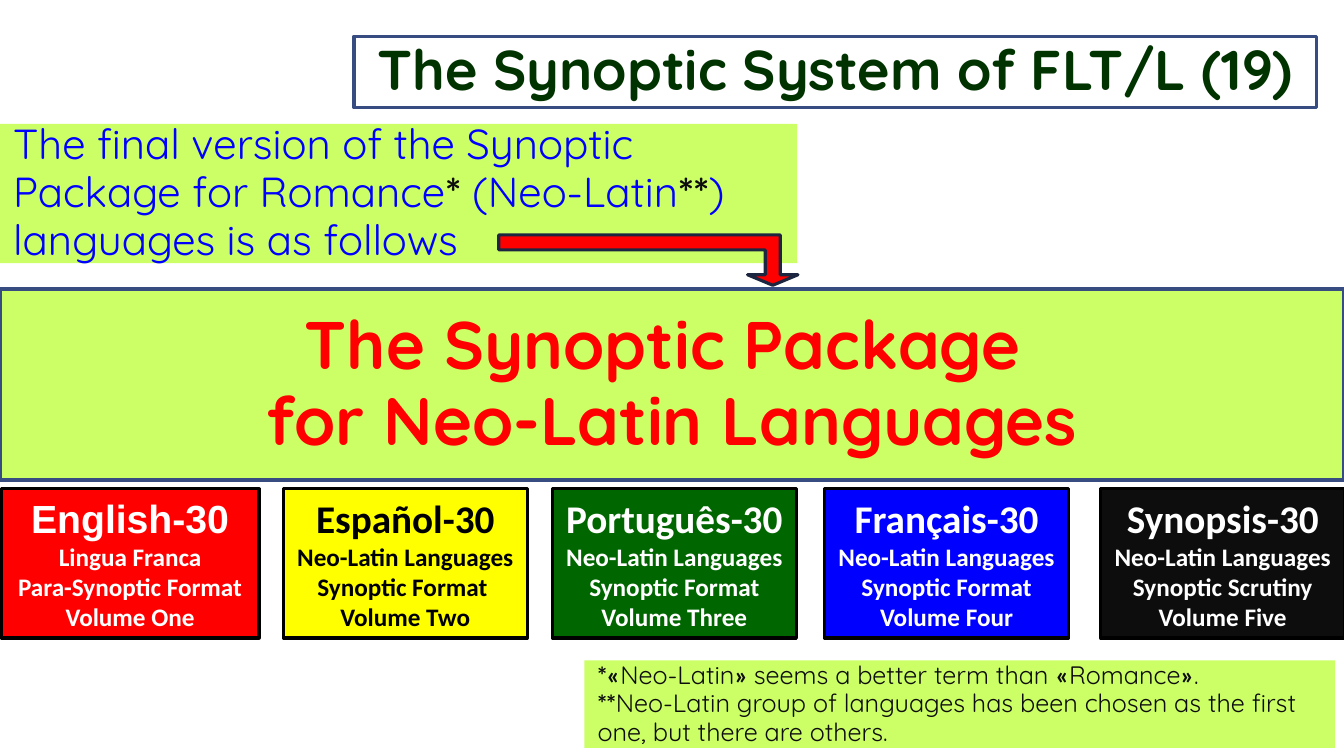
"""Build the slide on the synoptic package for Neo-Latin languages."""
from dataclasses import dataclass
from typing import Any, Optional

from pptx import Presentation
from pptx.dml.color import RGBColor
from pptx.enum.shapes import MSO_SHAPE
from pptx.enum.text import MSO_ANCHOR, MSO_AUTO_SIZE, PP_ALIGN
from pptx.util import Cm, Pt

COLORS = {
    "lime": "CCFF66", "red": "FF0000", "yellow": "FFFF00", "green": "006600",
    "blue": "0000FF", "ink": "0D0D0D", "black": "000000", "white": "FFFFFF",
    "title": "003300", "frame": "374C81", "arrow": "1C2640",
}
PANEL_FORMAT = {
    "word_wrap": True, "auto_size": MSO_AUTO_SIZE.NONE,
    "vertical_anchor": MSO_ANCHOR.MIDDLE,
    "margin_left": Cm(0.33), "margin_right": Cm(0.33),
    "margin_top": Cm(0.18), "margin_bottom": Cm(0.18),
}
VOLUME_FORMAT = {
    "word_wrap": True, "auto_size": MSO_AUTO_SIZE.SHAPE_TO_FIT_TEXT,
    "vertical_anchor": MSO_ANCHOR.TOP,
    "margin_left": Cm(0.25), "margin_right": Cm(0.25),
    "margin_top": Cm(0.13), "margin_bottom": Cm(0.13),
}
PANEL_PARAGRAPH = {"line_spacing": 0.95, "space_before": Pt(0), "alignment": PP_ALIGN.LEFT}
CENTERED_PANEL = {**PANEL_PARAGRAPH, "alignment": PP_ALIGN.CENTER}
VOLUME_PARAGRAPH = {"alignment": PP_ALIGN.CENTER}


@dataclass
class Span:
    """A stretch of text in one format."""
    text: str
    size: float
    color: str
    bold: bool = False
    font: str = "Quicksand"


@dataclass
class Panel:
    """A rectangle in centimetres with its paragraphs."""
    box: tuple[float, float, float, float]
    fill: Optional[str]
    line: Optional[str]
    line_width: float
    paragraphs: list[list[Span]]
    frame_format: dict[str, Any]
    paragraph_format: dict[str, Any]


@dataclass
class Volume:
    """One book of the package."""
    left: float
    fill: str
    text_color: str
    heading: str
    details: tuple[str, str, str]
    width: float = 6.15
    heading_font: str = "Calibri"


def apply(target: Any, values: dict[str, Any]) -> None:
    """Set every attribute named in the values."""
    for name, value in values.items():
        setattr(target, name, value)


def color(name: str) -> RGBColor:
    """Look up a colour by name."""
    return RGBColor.from_string(COLORS[name])


def paint(shape: Any, fill: Optional[str], line: Optional[str], width: float) -> None:
    """Set the fill and outline of a shape."""
    if fill:
        shape.fill.solid()
        shape.fill.fore_color.rgb = color(fill)
    if line:
        shape.line.color.rgb = color(line)
        shape.line.width = Pt(width)
    else:
        shape.line.fill.background()


def fill_panel(shape: Any, panel: Panel) -> None:
    """Format a shape as a panel and write its text."""
    paint(shape, panel.fill, panel.line, panel.line_width)
    frame = shape.text_frame
    apply(frame, panel.frame_format)
    for index, spans in enumerate(panel.paragraphs):
        paragraph = frame.add_paragraph() if index else frame.paragraphs[0]
        apply(paragraph, panel.paragraph_format)
        for span in spans:
            run = paragraph.add_run()
            run.text = span.text
            apply(run.font, {"size": Pt(span.size), "name": span.font, "bold": span.bold})
            run.font.color.rgb = color(span.color)


def add_panel(slide: Any, panel: Panel) -> None:
    """Add a rectangular panel to the slide."""
    shape = slide.shapes.add_shape(MSO_SHAPE.RECTANGLE, *map(Cm, panel.box))
    shape.shadow.inherit = False
    fill_panel(shape, panel)


def volume_panel(volume: Volume) -> Panel:
    """Lay out a volume as a panel."""
    heading = Span(volume.heading, 28, volume.text_color, True, volume.heading_font)
    details = [[Span(text, 18, volume.text_color, True, "Calibri")] for text in volume.details]
    return Panel((volume.left, 12.32, volume.width, 3.76), volume.fill, "black", 2.25,
                 [[heading], *details], VOLUME_FORMAT, VOLUME_PARAGRAPH)


def add_arrow(slide: Any) -> None:
    """Add the bent arrow pointing down to the banner."""
    arrow = slide.shapes.add_shape(MSO_SHAPE.BENT_UP_ARROW, Cm(12.57), Cm(5.92), Cm(7.54), Cm(1.27))
    arrow.shadow.inherit = False
    for index, value in enumerate((0.297, 0.5, 0.209)):
        arrow.adjustments[index] = value
    arrow._element.spPr.xfrm.set("flipV", "1")
    paint(arrow, "red", "arrow", 2.25)


def note(text: str, bold: bool = False, font: str = "Quicksand") -> Span:
    """Make a footnote span."""
    return Span(text, 18, "ink", bold, font)


TITLE = Panel((8.92, 0.91, 24.26, 1.8), None, "frame", 2.25,
              [[Span("The Synoptic System of FLT/L (19)", 40, "title", True)]],
              PANEL_FORMAT, CENTERED_PANEL)
BANNER = Panel((0, 7.29, 33.87, 4.8), "lime", "frame", 3,
               [[Span(text, 48, "red", True)]
                for text in ("The Synoptic Package ", "for Neo-Latin Languages")],
               PANEL_FORMAT, CENTERED_PANEL)
INTRODUCTION = Panel((0, 3.12, 20.09, 3.51), "lime", None, 0, [[
    Span("The final version of the Synoptic Package for Romance", 30, "blue"),
    Span("*", 30, "ink", True),
    Span(" (Neo-Latin", 30, "blue"),
    Span("**", 30, "ink", True),
    Span(") languages is as follows", 30, "blue"),
]], PANEL_FORMAT, PANEL_PARAGRAPH)
FOOTNOTES = Panel((14.73, 16.64, 18.92, 2.21), "lime", None, 0, [
    [note("*", True), note("«", True, "Calibri"), note("Neo-Latin"),
     note("» ", True, "Calibri"), note("seems a better term than "),
     note("«", True, "Calibri"), note("Romance"), note("»", True, "Calibri"), note(".")],
    [note("**", True),
     note("Neo-Latin group of languages has been chosen as the first one, but there are others.")],
], PANEL_FORMAT, PANEL_PARAGRAPH)
VOLUMES = [
    Volume(0.03, "red", "white", "English-30",
           ("Lingua Franca", "Para-Synoptic Format", "Volume One"), 6.5, "Arial"),
    Volume(7.14, "yellow", "black", "Español-30",
           ("Neo-Latin Languages", "Synoptic Format ", "Volume Two")),
    Volume(13.92, "green", "white", "Português-30",
           ("Neo-Latin Languages", "Synoptic Format", "Volume Three")),
    Volume(20.78, "blue", "white", "Français-30",
           ("Neo-Latin Languages", "Synoptic Format", "Volume Four")),
    Volume(27.74, "ink", "white", "Synopsis-30",
           ("Neo-Latin Languages", "Synoptic Scrutiny", "Volume Five")),
]


def main() -> None:
    """Create and save the presentation."""
    presentation = Presentation()
    apply(presentation, {"slide_width": Cm(33.87), "slide_height": Cm(19.05)})
    slide = presentation.slides.add_slide(presentation.slide_layouts[5])
    title = slide.shapes.title
    apply(title, dict(zip(("left", "top", "width", "height"), map(Cm, TITLE.box))))
    fill_panel(title, TITLE)
    for panel in (BANNER, INTRODUCTION, *map(volume_panel, VOLUMES), FOOTNOTES):
        add_panel(slide, panel)
    add_arrow(slide)
    presentation.save("out.pptx")


if __name__ == "__main__":
    main()
